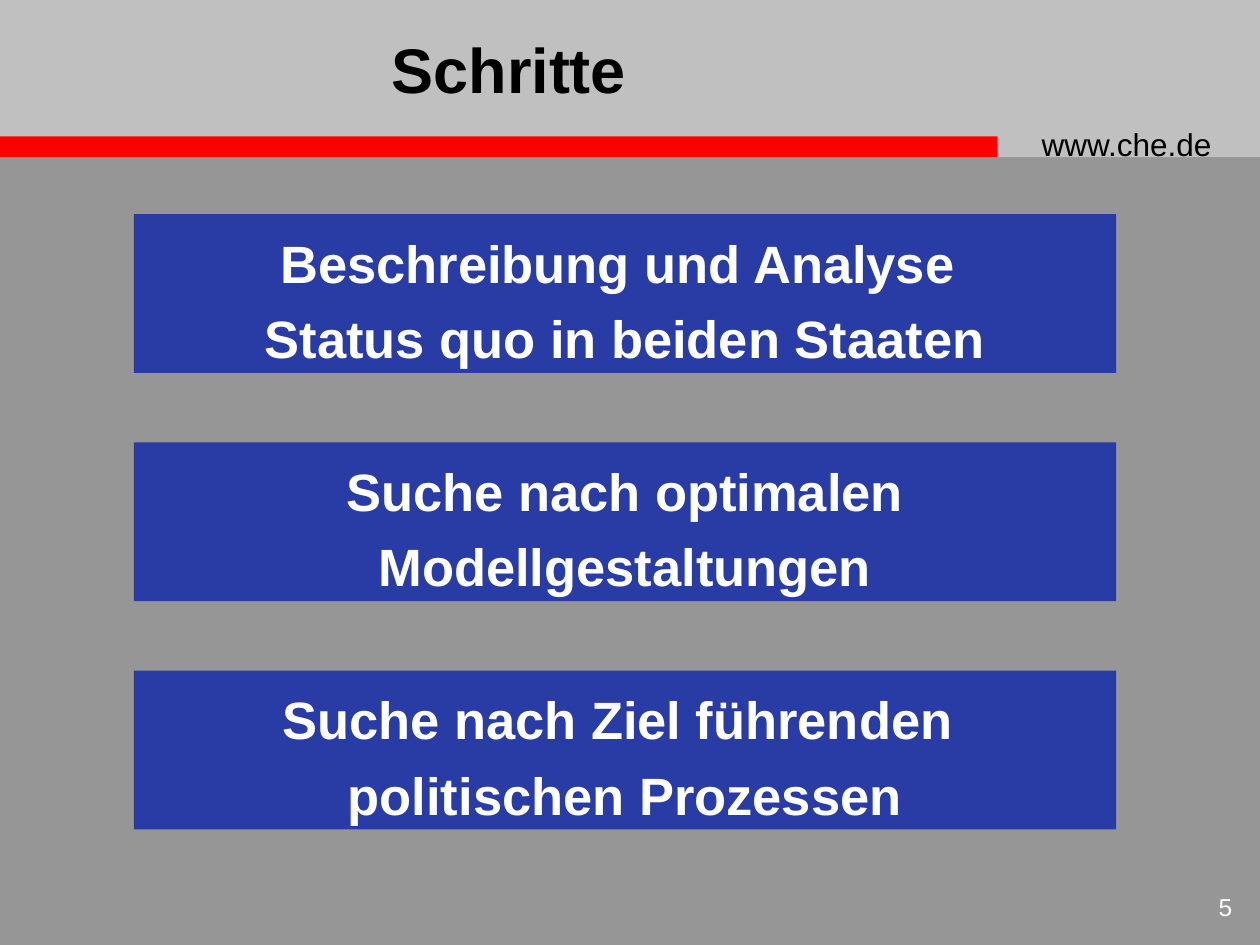
from pptx import Presentation
from pptx import util as u
from pptx.dml.color import RGBColor
from pptx.enum import shapes, text

THEME = {
    "font": "Arial",
    "back": "969696", "head": "C0C0C0", "bar": "FF0000", "step": "293BA5",
    "dark": "000000", "light": "FFFFFF",
    "title": 36, "body": 30, "web": 18, "page": 14,
}
ALIGN, ANCHOR = text.PP_ALIGN, text.MSO_ANCHOR

# Trailing spaces belong to the centred lines
STEPS = [
    ["Beschreibung und Analyse ", "Status quo in beiden Staaten"],
    ["Suche nach optimalen", "Modellgestaltungen"],
    ["Suche nach Ziel führenden ", "politischen Prozessen"],
]
BARS = [("head", (0, 0, 25.4, 3.17)), ("bar", (0, 2.75, 20.11, 0.42))]
LABELS = [
    (["www.che.de"], (20.75, 2.39, 4.45, 1.02),
     {"size": "web", "color": "dark", "wrap": True}),
    (["5"], (23.62, 17.86, 1.47, 1.07),
     {"size": "page", "color": "light", "align": ALIGN.RIGHT, "wrap": True}),
    (["Schritte"], (0, 0, 20.52, 2.75),
     {"size": "title", "color": "dark", "bold": True, "wrap": True,
      "align": ALIGN.CENTER, "anchor": ANCHOR.MIDDLE}),
]
STEP = {"size": "body", "color": "light", "bold": True, "wrap": False,
        "align": ALIGN.CENTER, "anchor": ANCHOR.MIDDLE, "space": 1.2}
LEFT, TOP, WIDE, HIGH, PITCH = 2.7, 4.32, 19.8, 3.2, 4.6


def tint(name):
    return RGBColor.from_string(THEME[name])


def block(slide, fill, area):
    shape = slide.shapes.add_shape(shapes.MSO_SHAPE.RECTANGLE, *map(u.Cm, area))
    shape.shadow.inherit = False
    shape.fill.solid()
    shape.fill.fore_color.rgb = tint(fill)
    shape.line.fill.background()
    return shape


def write(shape, lines, form):
    frame = shape.text_frame
    frame.word_wrap = form["wrap"]
    frame.vertical_anchor = form.get("anchor", ANCHOR.TOP)
    frame.text = "\n".join(lines)
    looks = {"name": THEME["font"], "size": u.Pt(THEME[form["size"]]),
             "bold": form.get("bold", False)}
    for para in frame.paragraphs:
        para.alignment = form.get("align", ALIGN.LEFT)
        para.line_spacing = form.get("space")
        for key, value in looks.items():
            setattr(para.font, key, value)
        para.font.color.rgb = tint(form["color"])


def main():
    deck = Presentation()
    deck.slide_width, deck.slide_height = u.Cm(25.4), u.Cm(19.05)
    slide = deck.slides.add_slide(deck.slide_layouts[6])
    slide.background.fill.solid()
    slide.background.fill.fore_color.rgb = tint("back")
    for fill, area in BARS:
        block(slide, fill, area)
    for lines, area, form in LABELS:
        write(slide.shapes.add_textbox(*map(u.Cm, area)), lines, form)
    for row, lines in enumerate(STEPS):
        area = (LEFT, TOP + row * PITCH, WIDE, HIGH)
        write(block(slide, "step", area), lines, STEP)
    deck.save("out.pptx")


if __name__ == "__main__":
    main()
